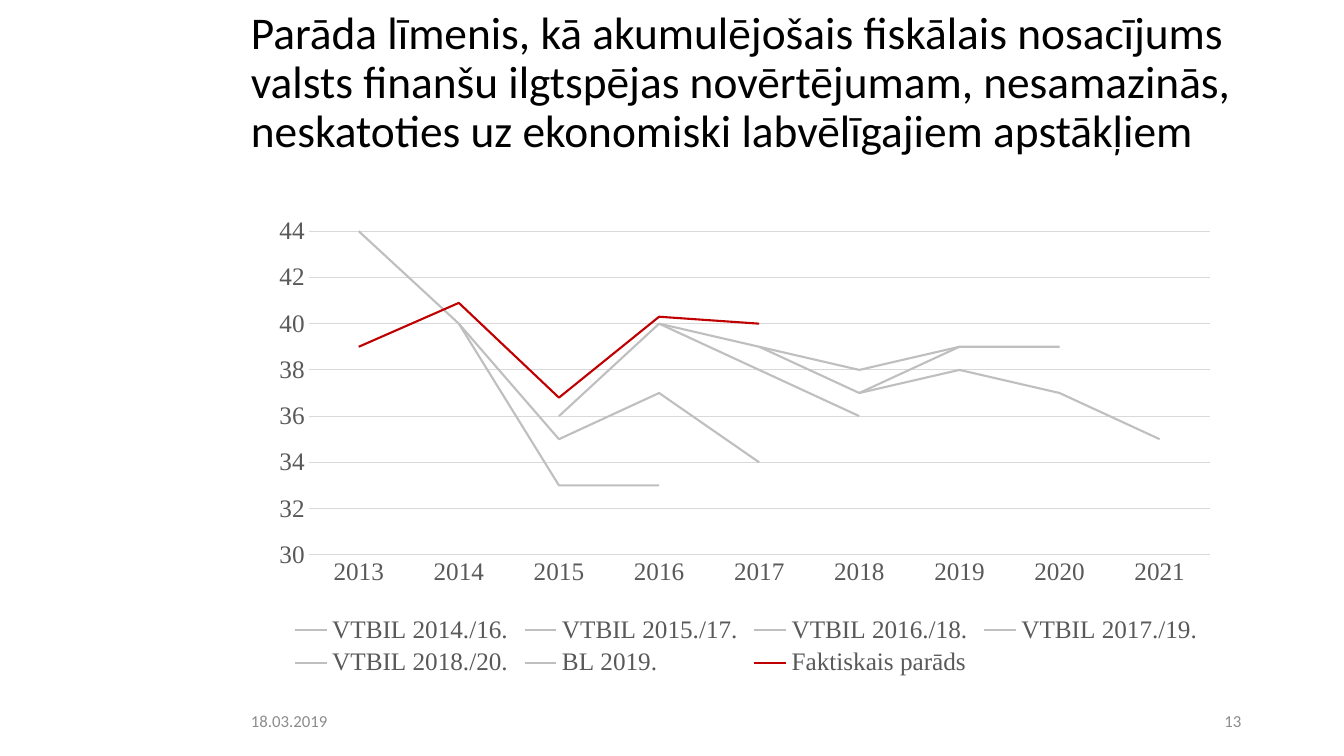
from dataclasses import dataclass

from pptx import Presentation
from pptx.chart.data import CategoryChartData
from pptx.dml.color import RGBColor
from pptx.enum.chart import XL_CHART_TYPE as ChartKind
from pptx.enum.chart import XL_LEGEND_POSITION as LegendPlace
from pptx.enum.chart import XL_TICK_MARK as Tick
from pptx.enum.text import MSO_ANCHOR as Anchor
from pptx.enum.text import PP_ALIGN as Align
from pptx.oxml import parse_xml
from pptx.oxml.ns import nsdecls, qn
from pptx.util import Pt

# Content
TITLE = ("Parāda līmenis, kā akumulējošais fiskālais nosacījums valsts finanšu "
         "ilgtspējas novērtējumam, nesamazinās, neskatoties uz ekonomiski "
         "labvēlīgajiem apstākļiem")
DATE = "18.03.2019"
PAGE_NUMBER = "13"
FIRST_YEAR, LAST_YEAR = 2013, 2021
ACTUAL = "Faktiskais parāds"
# Series name, first year, debt level for each following year
DEBT = [
    ("VTBIL 2014./16.", 2013, [44, 40, 33, 33]),
    ("VTBIL 2015./17.", 2014, [40, 35, 37, 34]),
    ("VTBIL 2016./18.", 2015, [36, 40, 38, 36]),
    ("VTBIL 2017./19.", 2016, [40, 39, 38, 39]),
    ("VTBIL 2018./20.", 2017, [39, 37, 39, 39]),
    ("BL 2019.", 2018, [37, 38, 37, 35]),
    (ACTUAL, 2013, [39, 40.9, 36.8, 40.3, 40]),
]


@dataclass(frozen=True)
class Theme:
    text_font: str = "Calibri"
    chart_font: str = "Times New Roman"
    title_size: float = 32.4
    footer_size: float = 12
    chart_size: float = 18
    title: str = "000000"
    footer: str = "8C8C8C"
    label: str = "595959"
    grid: str = "D9D9D9"
    forecast: str = "BFBFBF"
    actual: str = "C00000"


THEME = Theme()

# Layout in px, 100 to the inch
PX = 9144
PAGE_WIDTH, PAGE_HEIGHT = 1333, 750
LEFT, WIDTH = 239, 1002
TITLE_TOP, TITLE_HEIGHT, TITLE_BOTTOM_INSET = 40, 136, 54
CHART_TOP, CHART_HEIGHT = TITLE_TOP + TITLE_HEIGHT, 500
FOOTER_TOP, FOOTER_HEIGHT = 695, 40
DATE_WIDTH, NUMBER_WIDTH = 164, 79
PLOT = {"x": 0.067, "y": 0.061, "w": 0.892, "h": 0.688}


def color(value):
    return RGBColor.from_string(value)


def add_text(page, text, place, size, ink, align=Align.LEFT):
    box = page.shapes.add_textbox(*(value * PX for value in place))
    frame = box.text_frame
    frame.word_wrap = True
    frame.vertical_anchor = Anchor.MIDDLE
    para = frame.paragraphs[0]
    para.alignment = align
    span = para.add_run()
    span.text = text
    span.font.name = THEME.text_font
    span.font.size = Pt(size)
    span.font.color.rgb = color(ink)
    return frame


def style_font(font):
    font.name = THEME.chart_font
    font.size = Pt(THEME.chart_size)
    font.color.rgb = color(THEME.label)


def style_line(line, ink, width):
    line.color.rgb = color(ink)
    line.width = Pt(width)


def place_plot(chart):
    area = chart._chartSpace.find(".//" + qn("c:plotArea"))
    for layout in area.findall(qn("c:layout")):
        area.remove(layout)
    modes = "".join(f'<c:{axis}Mode val="edge"/>' for axis in "xy")
    sizes = "".join(f'<c:{key} val="{value}"/>' for key, value in PLOT.items())
    area.insert(0, parse_xml(
        f'<c:layout {nsdecls("c")}><c:manualLayout><c:layoutTarget val="inner"/>'
        f"{modes}{sizes}</c:manualLayout></c:layout>"))


def add_debt_chart(page):
    years = range(FIRST_YEAR, LAST_YEAR + 1)
    data = CategoryChartData(number_format="General")
    data.categories = [str(year) for year in years]
    for name, start, levels in DEBT:
        known = dict(enumerate(levels, start))
        data.add_series(name, [known.get(year) for year in years])
    place = (LEFT, CHART_TOP, WIDTH, CHART_HEIGHT)
    chart = page.shapes.add_chart(
        ChartKind.LINE, *(value * PX for value in place), data).chart
    chart.has_title = False
    style_font(chart.font)
    place_plot(chart)

    # Lines
    chart.plots[0].vary_by_categories = False
    for series in chart.plots[0].series:
        series.smooth = False
        ink = THEME.actual if series.name == ACTUAL else THEME.forecast
        style_line(series.format.line, ink, 1.5)

    # Axes
    years_axis, debt_axis = chart.category_axis, chart.value_axis
    for axis in (years_axis, debt_axis):
        axis.major_tick_mark = axis.minor_tick_mark = Tick.NONE
        style_font(axis.tick_labels.font)
    style_line(years_axis.format.line, THEME.grid, 0.75)
    debt_axis.format.line.fill.background()
    debt_axis.minimum_scale, debt_axis.maximum_scale = 30, 45
    debt_axis.major_unit = 2
    debt_axis.tick_labels.number_format = "0"
    debt_axis.tick_labels.number_format_is_linked = False
    style_line(debt_axis.major_gridlines.format.line, THEME.grid, 0.75)

    # Legend
    chart.has_legend = True
    chart.legend.position = LegendPlace.BOTTOM
    chart.legend.include_in_layout = False
    style_font(chart.legend.font)


def main():
    deck = Presentation()
    deck.slide_width, deck.slide_height = PAGE_WIDTH * PX, PAGE_HEIGHT * PX
    page = deck.slides.add_slide(deck.slide_layouts[6])

    # Title
    title = add_text(page, TITLE, (LEFT, TITLE_TOP, WIDTH, TITLE_HEIGHT),
                     THEME.title_size, THEME.title)
    title.margin_bottom = TITLE_BOTTOM_INSET * PX
    title.paragraphs[0].line_spacing = 0.9

    # Footer
    add_text(page, DATE, (LEFT, FOOTER_TOP, DATE_WIDTH, FOOTER_HEIGHT),
             THEME.footer_size, THEME.footer)
    number_left = LEFT + WIDTH - NUMBER_WIDTH
    add_text(page, PAGE_NUMBER,
             (number_left, FOOTER_TOP, NUMBER_WIDTH, FOOTER_HEIGHT),
             THEME.footer_size, THEME.footer, Align.RIGHT)

    # Chart
    add_debt_chart(page)
    deck.save("out.pptx")


if __name__ == "__main__":
    main()
